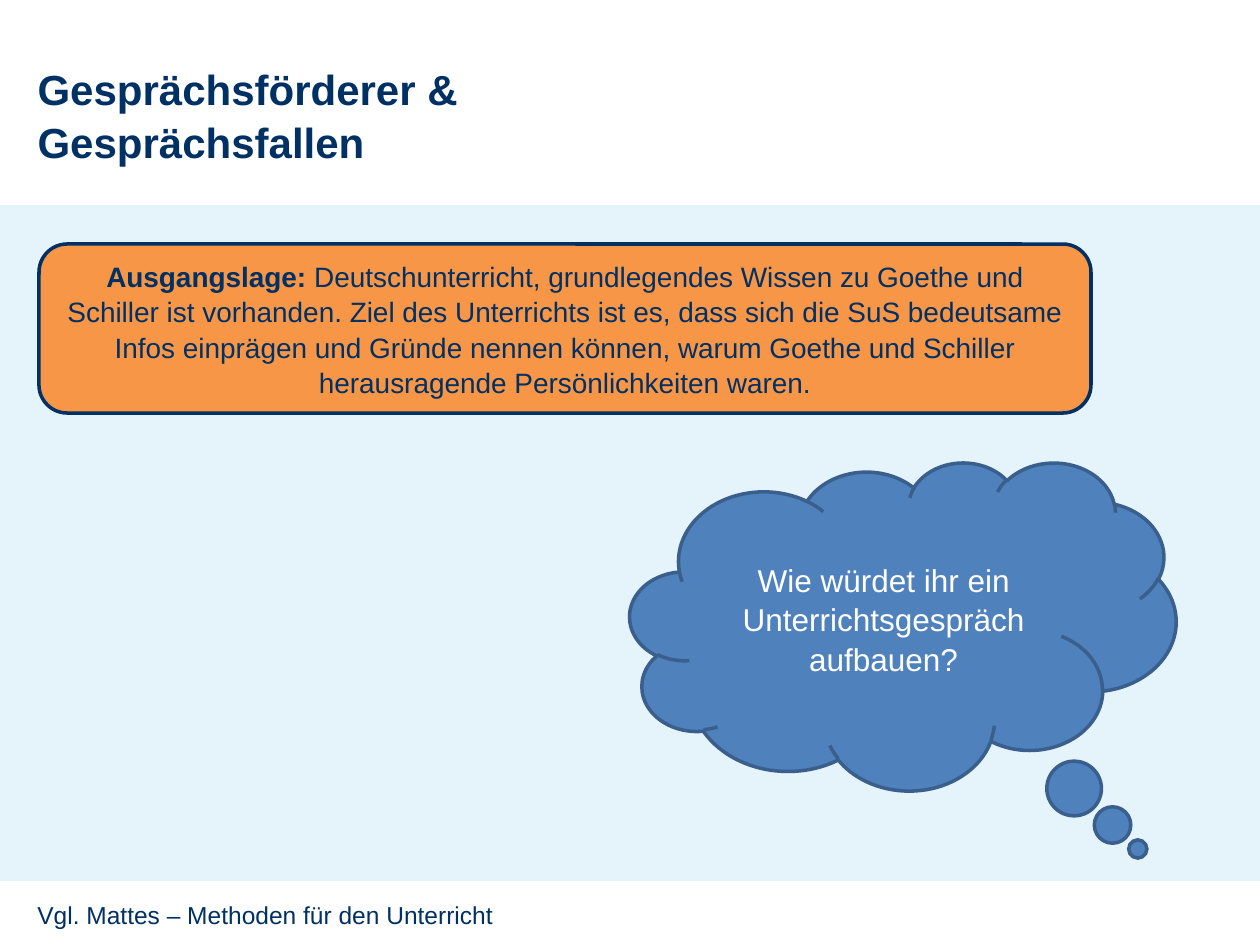
from dataclasses import dataclass

from lxml import etree
from pptx import Presentation
from pptx.dml.color import RGBColor
from pptx.enum import shapes, text
from pptx.oxml.ns import qn
from pptx.util import Emu, Pt

EMU_PER_PX = 914400 / 126


@dataclass(frozen=True)
class Theme:
    font: str = "Arial"
    navy: str = "003064"
    band: str = "008CCF"
    orange: str = "F79646"
    blue: str = "4F81BD"
    blue_edge: str = "3A5F8C"
    white: str = "FFFFFF"
    title_size: int = 24
    question_size: int = 18
    body_size: int = 16
    source_size: int = 14
    edge: int = 2
    spacing: float = 1.05


THEME = Theme()


def px(length):
    return Emu(round(length * EMU_PER_PX))


def place(shape, left, top, width, height):
    shape.left, shape.top = px(left), px(top)
    shape.width, shape.height = px(width), px(height)


def write(shape, spans, size, color=THEME.navy, align=text.PP_ALIGN.LEFT,
          anchor=text.MSO_ANCHOR.TOP):
    """Fill a shape with one paragraph of (words, bold) spans."""
    frame = shape.text_frame
    frame.word_wrap = True
    frame.auto_size = text.MSO_AUTO_SIZE.NONE
    frame.vertical_anchor = anchor
    para = frame.paragraphs[0]
    para.alignment = align
    para.line_spacing = THEME.spacing
    para.space_before = Pt(0)
    for words, bold in spans:
        span = para.add_run()
        span.text = words
        span.font.color.rgb = RGBColor.from_string(color)
        formats = {"name": THEME.font, "size": Pt(size), "bold": bold}
        for name, value in formats.items():
            setattr(span.font, name, value)


def add_box(page, kind, at, fill, edge=None, opacity=None):
    box = page.shapes.add_shape(kind, *map(px, at))
    box.shadow.inherit = False
    box.fill.solid()
    box.fill.fore_color.rgb = RGBColor.from_string(fill)
    if opacity is not None:
        color = box.fill._xPr.find(".//" + qn("a:srgbClr"))
        etree.SubElement(color, qn("a:alpha"), val=str(opacity * 1000))
    if edge:
        box.line.color.rgb = RGBColor.from_string(edge)
        box.line.width = Pt(THEME.edge)
    else:
        box.line.fill.background()
    return box


def add_title(page, words, at):
    title = page.shapes.title
    place(title, *at)
    write(title, [(words, True)], THEME.title_size)


def add_note(page, words, at):
    note = page.shapes.add_textbox(*map(px, at))
    write(note, [(words, False)], THEME.source_size)


def main():
    deck = Presentation()
    deck.slide_width, deck.slide_height = px(1260), px(945)
    page = deck.slides.add_slide(deck.slide_layouts[5])
    centred = {"align": text.PP_ALIGN.CENTER, "anchor": text.MSO_ANCHOR.MIDDLE}

    # Pale content band, title and source line
    add_box(page, shapes.MSO_SHAPE.RECTANGLE, (0, 205, 1260, 676),
            THEME.band, opacity=10)
    add_title(page, "Gesprächsförderer & Gesprächsfallen", (25, 55, 755, 115))
    add_note(page, "Vgl. Mattes – Methoden für den Unterricht",
             (25, 892, 1081, 66))

    # Starting situation
    situation = add_box(page, shapes.MSO_SHAPE.ROUNDED_RECTANGLE,
                        (39, 244, 1052, 169), THEME.orange, THEME.navy)
    write(situation, [
        ("Ausgangslage: ", True),
        ("Deutschunterricht, grundlegendes Wissen zu Goethe und Schiller ist "
         "vorhanden. Ziel des Unterrichts ist es, dass sich die SuS "
         "bedeutsame Infos einprägen und Gründe nennen können, warum Goethe "
         "und Schiller herausragende Persönlichkeiten waren.", False),
    ], THEME.body_size, **centred)

    # Question in a thought bubble
    question = add_box(page, shapes.MSO_SHAPE.CLOUD_CALLOUT,
                       (630, 462, 546, 328), THEME.blue, THEME.blue_edge)
    question.adjustments[0], question.adjustments[1] = 0.43, 0.68
    write(question,
          [("Wie würdet ihr ein Unterrichtsgespräch aufbauen?", False)],
          THEME.question_size, THEME.white, **centred)

    deck.save("out.pptx")


if __name__ == "__main__":
    main()
